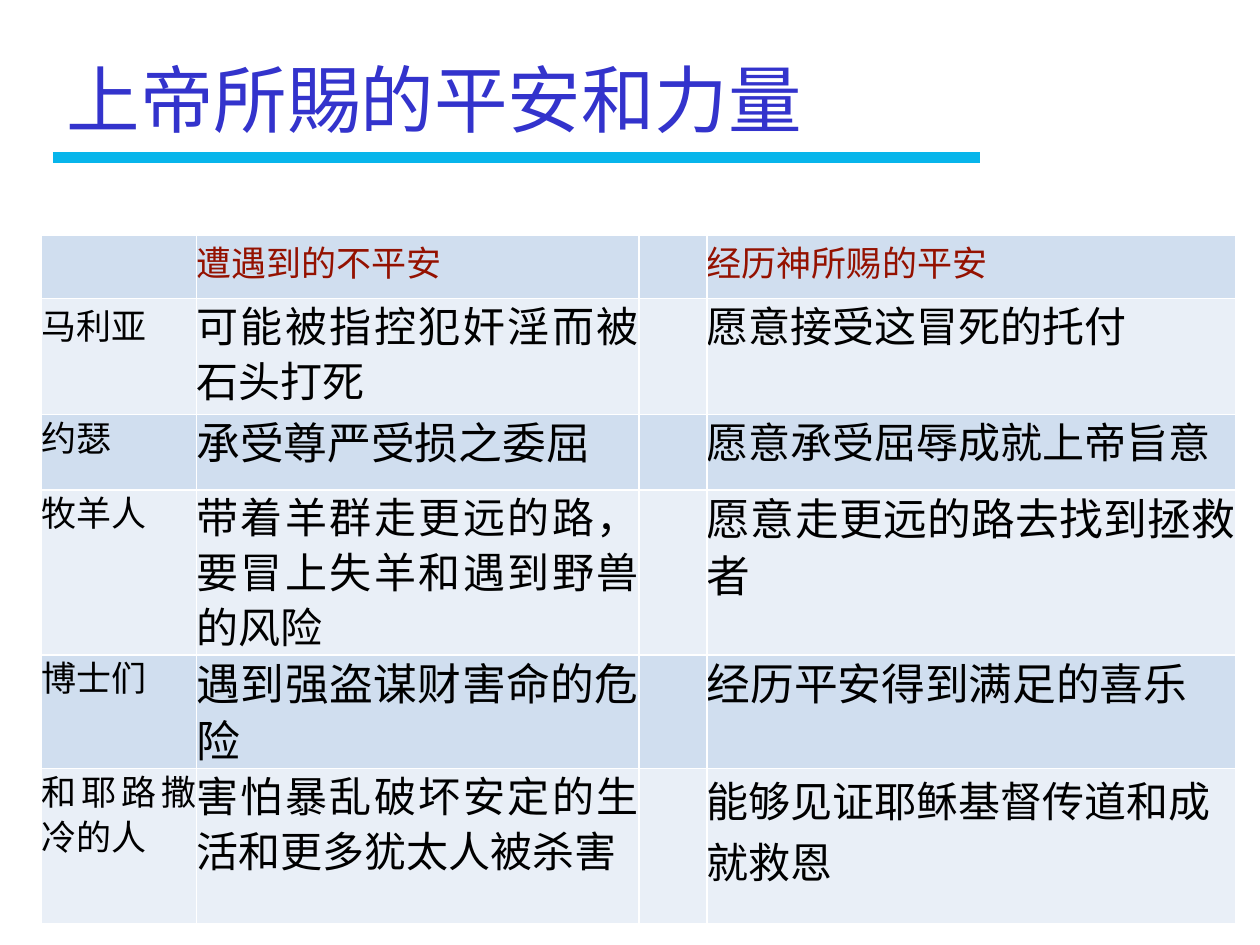
from lxml import etree
from pptx import Presentation
from pptx import util as u
from pptx.dml.color import RGBColor
from pptx.enum import shapes, text
from pptx.oxml.ns import qn

WHITE = RGBColor(0xFF, 0xFF, 0xFF)
BLACK = RGBColor(0x00, 0x00, 0x00)
TITLE_BLUE = RGBColor(0x33, 0x33, 0xCC)
RULE_BLUE = RGBColor(0x07, 0xB5, 0xEB)
HEADER_RED = RGBColor(0x94, 0x11, 0x00)
BANDS = (RGBColor(0xD0, 0xDE, 0xEF), RGBColor(0xE9, 0xEF, 0xF7))
CJK, LATIN = "Noto Sans CJK SC", "Roboto"

COLUMNS = (1.23, 3.51, 0.54, 4.2)
HEIGHTS = (0.5, 0.92, 0.6, 1.31, 0.9, 1.23)
# Each filled cell: wording and size
ROWS = (
    (None, ("遭遇到的不平安", 20), None, ("经历神所赐的平安", 20)),
    (("马利亚", 20), ("可能被指控犯奸淫而被石头打死", 24), None,
     ("愿意接受这冒死的托付", 24)),
    (("约瑟", 20), ("承受尊严受损之委屈", 25), None,
     ("愿意承受屈辱成就上帝旨意", 24)),
    (("牧羊人", 20), ("带着羊群走更远的路，要冒上失羊和遇到野兽的风险", 24), None,
     ("愿意走更远的路去找到拯救者", 25)),
    (("博士们", 20), ("遇到强盗谋财害命的危险", 25), None,
     ("经历平安得到满足的喜乐", 25)),
    (("和耶路撒冷的人", 20), ("害怕暴乱破坏安定的生活和更多犹太人被杀害", 24), None,
     ("能够见证耶稣基督传道和成就救恩", 24)),
)
# Cells set in Roboto, left aligned with single line spacing
PLAIN_CELLS = {(0, 1), (0, 3), (1, 0), (5, 3)}


class Deck:
    def __init__(self, width, height):
        self.prs = Presentation()
        self.prs.slide_width, self.prs.slide_height = u.Inches(width), u.Inches(height)
        self.s = self.prs.slides.add_slide(self.prs.slide_layouts[6])

    def run(self, p, wording, size, color, font):
        r = p.add_run()
        r.text = wording
        r.font.size, r.font.name = u.Pt(size), font
        r.font.color.rgb = color
        # Chinese glyphs always take the CJK face and its line height
        etree.SubElement(r.font._element, qn("a:ea"), typeface=CJK)

    def rule(self, x1, x2, y, color, width):
        line = self.s.shapes.add_connector(
            shapes.MSO_CONNECTOR.STRAIGHT, *map(u.Inches, (x1, y, x2, y)))
        line.line.color.rgb, line.line.width = color, u.Pt(width)
        etree.SubElement(line._element.spPr, qn("a:effectLst"))

    def title(self, box, wording):
        tf = self.s.shapes.add_textbox(*map(u.Inches, box)).text_frame
        tf.word_wrap = True
        tf.vertical_anchor = text.MSO_ANCHOR.MIDDLE
        tf.margin_left = tf.margin_right = u.Inches(0.05)
        tf.margin_top = tf.margin_bottom = u.Inches(0.05)
        p = tf.paragraphs[0]
        p.line_spacing = 0.9
        self.run(p, wording, 42, TITLE_BLUE, CJK)

    def borders(self, cell, color, width):
        tc_pr = cell._tc.get_or_add_tcPr()
        for i, side in enumerate(("lnL", "lnR", "lnT", "lnB")):
            ln = etree.Element(qn(f"a:{side}"), w=str(u.Pt(width)))
            fill = etree.SubElement(ln, qn("a:solidFill"))
            etree.SubElement(fill, qn("a:srgbClr"), val=str(color))
            tc_pr.insert(i, ln)

    def table(self, left, top):
        table = self.s.shapes.add_table(
            len(ROWS), len(COLUMNS), u.Inches(left), u.Inches(top),
            u.Inches(sum(COLUMNS)), u.Inches(sum(HEIGHTS))).table
        for column, width in zip(table.columns, COLUMNS):
            column.width = u.Inches(width)
        for i, (row, height) in enumerate(zip(ROWS, HEIGHTS)):
            table.rows[i].height = u.Inches(height)
            for j, content in enumerate(row):
                cell = table.cell(i, j)
                cell.fill.solid()
                cell.fill.fore_color.rgb = BANDS[i % 2]
                self.borders(cell, WHITE, 1)
                cell.margin_left = cell.margin_right = 0
                cell.margin_top = cell.margin_bottom = 0
                if content:
                    plain = (i, j) in PLAIN_CELLS
                    p = cell.text_frame.paragraphs[0]
                    if not plain:
                        p.alignment = text.PP_ALIGN.JUSTIFY
                        p.line_spacing = 0.9
                    self.run(p, *content, BLACK if i else HEADER_RED,
                             LATIN if plain else CJK)


def main():
    deck = Deck(10, 7.5)
    # Heading with its rule
    deck.rule(0.42, 7.78, 1.25, RULE_BLUE, 6)
    deck.title((0.48, 0.1, 7.24, 1.45), "上帝所賜的平安和力量")
    # Troubles and the peace received
    deck.table(0.33, 1.87)
    deck.prs.save("out.pptx")


if __name__ == "__main__":
    main()
